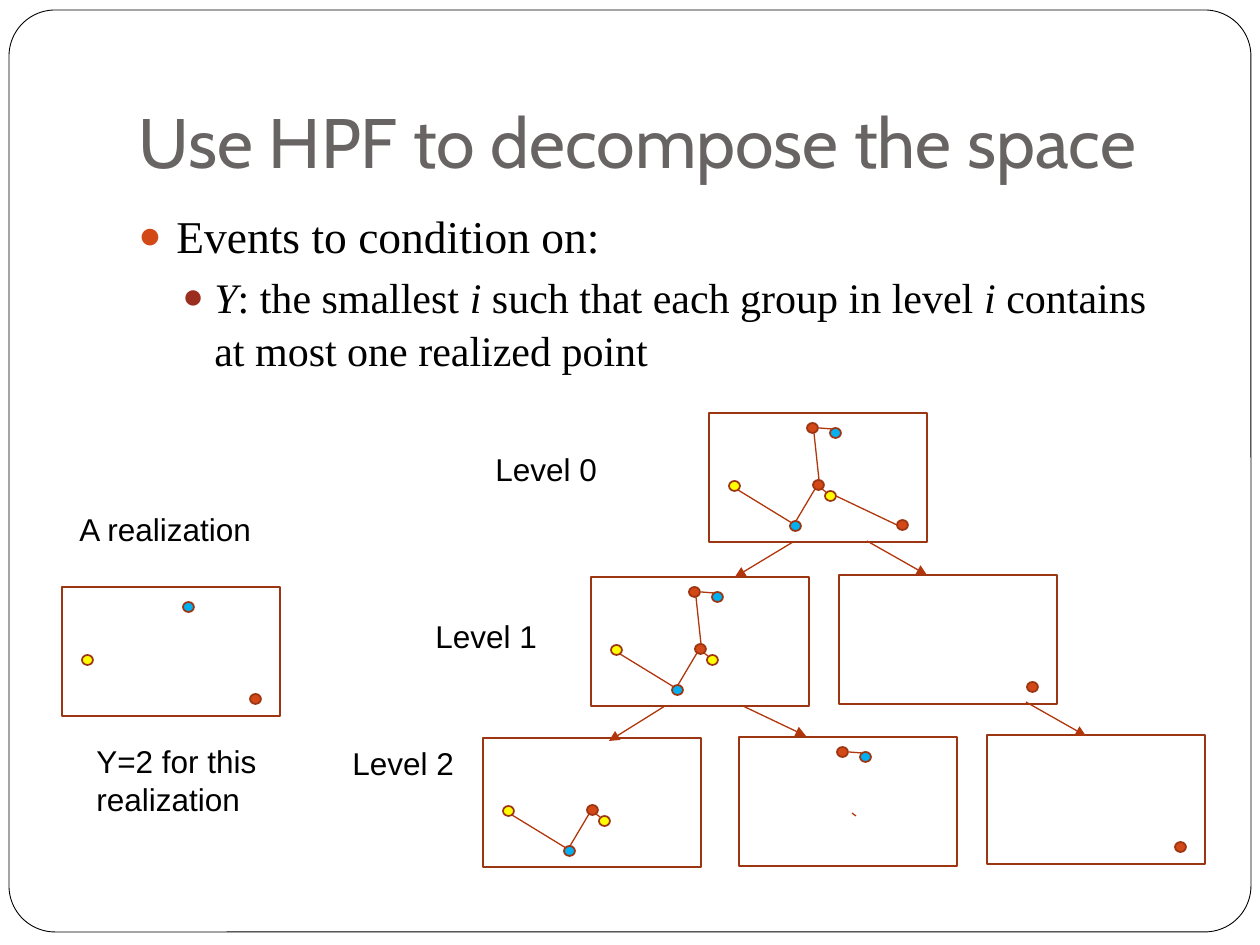
import pptx
import pptx.util
import pptx.dml.color
import pptx.enum.shapes
import pptx.enum.text
import pptx.oxml
import pptx.oxml.ns
from dataclasses import dataclass

PX = pptx.util.Inches(1) / 126


@dataclass(frozen=True)
class Theme:
    title_font: str = "Cabin"
    body_font: str = "Times New Roman"
    label_font: str = "Arial"
    title_size: int = 40
    event_size: int = 26
    detail_size: int = 24
    label_size: int = 18
    title: str = "696464"
    text: str = "000000"
    paper: str = "FFFFFF"
    outline: str = "9C3511"
    link: str = "B1360B"
    red: str = "D34817"
    yellow: str = "FFFF00"
    blue: str = "00B0F0"
    detail_bullet: str = "9B2D1F"


THEME = Theme()
PANEL_SIZE = (218, 129)
DOT_SIZE = (11, 10)

# Points and links of the point set, measured from a panel's corner
DOTS = {
    "left": (20, 68, THEME.yellow),
    "upper": (121, 15, THEME.blue),
    "lower": (81, 108, THEME.blue),
    "top": (98, 10, THEME.red),
    "right": (188, 107, THEME.red),
    "middle": (104, 67, THEME.red),
    "near": (116, 78, THEME.yellow),
}
LINKS = {
    "middle-near": (113, 76, 117, 79),
    "middle-top": (110, 67, 105, 20),
    "left-lower": (29, 77, 83, 110),
    "lower-middle": (87, 108, 106, 76),
    "top-upper": (110, 15, 123, 16),
    "near-right": (127, 83, 188, 112),
}
LEFT_DOTS = ["left", "lower", "middle", "near"]
LEFT_LINKS = ["middle-near", "left-lower", "lower-middle"]

# Panel corner, its points and its links
PANELS = [
    ((709, 413), list(DOTS), list(LINKS)),
    ((591, 577), LEFT_DOTS + ["upper", "top"],
     LEFT_LINKS + ["middle-top", "top-upper"]),
    ((839, 575), ["right"], []),
    ((739, 737), ["upper", "top"], ["middle-near", "top-upper"]),
    ((987, 735), ["right"], []),
    ((483, 738), LEFT_DOTS, LEFT_LINKS),
    ((62, 587), ["left", "upper", "right"], []),
]
ARROWS = [
    (793, 542, 735, 577),
    (867, 541, 927, 575),
    (1026, 702, 1086, 736),
    (743, 706, 806, 736),
    (665, 706, 609, 741),
]
LABELS = [
    ("Level 0", (483, 444, 168, 50)),
    ("Level 1", (423, 611, 168, 50)),
    ("Level 2", (340, 738, 168, 50)),
    ("A realization", (67, 504, 236, 50)),
    ("Y=2 for this realization", (84, 736, 205, 89)),
]


def emu(*lengths):
    return [round(length * PX) for length in lengths]


def rgb(value):
    return pptx.dml.color.RGBColor.from_string(value)


def add_run(paragraph, text, font, size, color, italic=False):
    run = paragraph.add_run()
    run.text = text
    run.font.name = font
    run.font.size = pptx.util.Pt(size)
    run.font.color.rgb = rgb(color)
    run.font.italic = italic


def add_outline(shapes, kind, box, fill, line, width):
    shape = shapes.add_shape(kind, *emu(*box))
    shape.shadow.inherit = False
    if fill:
        shape.fill.solid()
        shape.fill.fore_color.rgb = rgb(fill)
    else:
        shape.fill.background()
    shape.line.color.rgb = rgb(line)
    shape.line.width = pptx.util.Pt(width)
    return shape


def add_line(shapes, ends, arrow=False):
    connector = shapes.add_connector(
        pptx.enum.shapes.MSO_CONNECTOR.STRAIGHT, *emu(*ends))
    connector.line.color.rgb = rgb(THEME.link)
    connector.line.width = pptx.util.Pt(0.75)
    if arrow:
        tail = pptx.oxml.parse_xml(
            f'<a:tailEnd {pptx.oxml.ns.nsdecls("a")} type="triangle"/>')
        connector.line._get_or_add_ln().append(tail)
    connector._element.spPr.append(pptx.oxml.parse_xml(
        f'<a:effectLst {pptx.oxml.ns.nsdecls("a")}/>'))


def add_text_box(slide, box):
    frame = slide.shapes.add_textbox(*emu(*box)).text_frame
    frame.word_wrap = True
    return frame


def add_bullet(paragraph, color, left, hanging):
    properties = paragraph._p.get_or_add_pPr()
    properties.set("marL", str(emu(left)[0]))
    properties.set("indent", str(-emu(hanging)[0]))
    namespace = pptx.oxml.ns.nsdecls("a")
    for xml in (
        f'<a:buClr {namespace}><a:srgbClr val="{color}"/></a:buClr>',
        f'<a:buSzPct {namespace} val="85000"/>',
        f'<a:buFont {namespace} typeface="Arial"/>',
        f'<a:buChar {namespace} char="●"/>',
    ):
        properties.append(pptx.oxml.parse_xml(xml))


def add_frame(slide, box):
    frame = add_outline(slide.shapes,
                        pptx.enum.shapes.MSO_SHAPE.ROUNDED_RECTANGLE,
                        box, THEME.paper, THEME.text, 0.5)
    frame.adjustments[0] = 0.05
    # The frame lies behind the title
    slide.shapes._spTree.insert(2, frame._element)


def add_title(slide, box):
    title = slide.shapes.title
    title.left, title.top, title.width, title.height = emu(*box)
    frame = title.text_frame
    frame.word_wrap = True
    frame.auto_size = pptx.enum.text.MSO_AUTO_SIZE.NONE
    frame.vertical_anchor = pptx.enum.text.MSO_ANCHOR.BOTTOM
    frame.margin_bottom = pptx.util.Inches(0.1)
    paragraph = frame.paragraphs[0]
    paragraph.alignment = pptx.enum.text.PP_ALIGN.LEFT
    add_run(paragraph, "Use HPF to decompose the space",
            THEME.title_font, THEME.title_size, THEME.title)


def add_events(slide, box):
    frame = add_text_box(slide, box)
    event = frame.paragraphs[0]
    event.space_before = pptx.util.Pt(5.8)
    event.line_spacing = 1.05
    add_bullet(event, THEME.red, 38, 38)
    add_run(event, "Events to condition on:",
            THEME.body_font, THEME.event_size, THEME.text)

    detail = frame.add_paragraph()
    detail.level = 1
    detail.space_before = pptx.util.Pt(3.7)
    detail.line_spacing = 1.05
    add_bullet(detail, THEME.detail_bullet, 76, 32)
    parts = ["Y", ": the smallest ", "i", " such that each group in level ",
             "i", " contains at most one realized point"]
    for index, part in enumerate(parts):
        add_run(detail, part, THEME.body_font, THEME.detail_size,
                THEME.text, italic=index % 2 == 0)


def add_panel(slide, corner, dots, links):
    left, top = corner
    shapes = slide.shapes.add_group_shape().shapes
    for name in dots:
        x, y, color = DOTS[name]
        add_outline(shapes, pptx.enum.shapes.MSO_SHAPE.OVAL,
                    (left + x, top + y, *DOT_SIZE), color, THEME.outline, 1)
    for name in links:
        x1, y1, x2, y2 = LINKS[name]
        add_line(shapes, (left + x1, top + y1, left + x2, top + y2))
    add_outline(shapes, pptx.enum.shapes.MSO_SHAPE.RECTANGLE,
                (left, top, *PANEL_SIZE), None, THEME.outline, 1)


def add_label(slide, text, box):
    paragraph = add_text_box(slide, box).paragraphs[0]
    add_run(paragraph, text, THEME.label_font, THEME.label_size, THEME.text)


def main():
    presentation = pptx.Presentation()
    presentation.slide_width, presentation.slide_height = emu(1260, 945)
    slide = presentation.slides.add_slide(presentation.slide_layouts[5])

    add_frame(slide, (9, 10, 1242, 922))
    add_title(slide, (126, 38, 1071, 157))
    add_events(slide, (126, 199, 1071, 630))

    # Decomposition tree and the realization
    for corner, dots, links in PANELS:
        add_panel(slide, corner, dots, links)
    for ends in ARROWS:
        add_line(slide.shapes, ends, arrow=True)
    for text, box in LABELS:
        add_label(slide, text, box)

    presentation.save("out.pptx")


if __name__ == "__main__":
    main()
